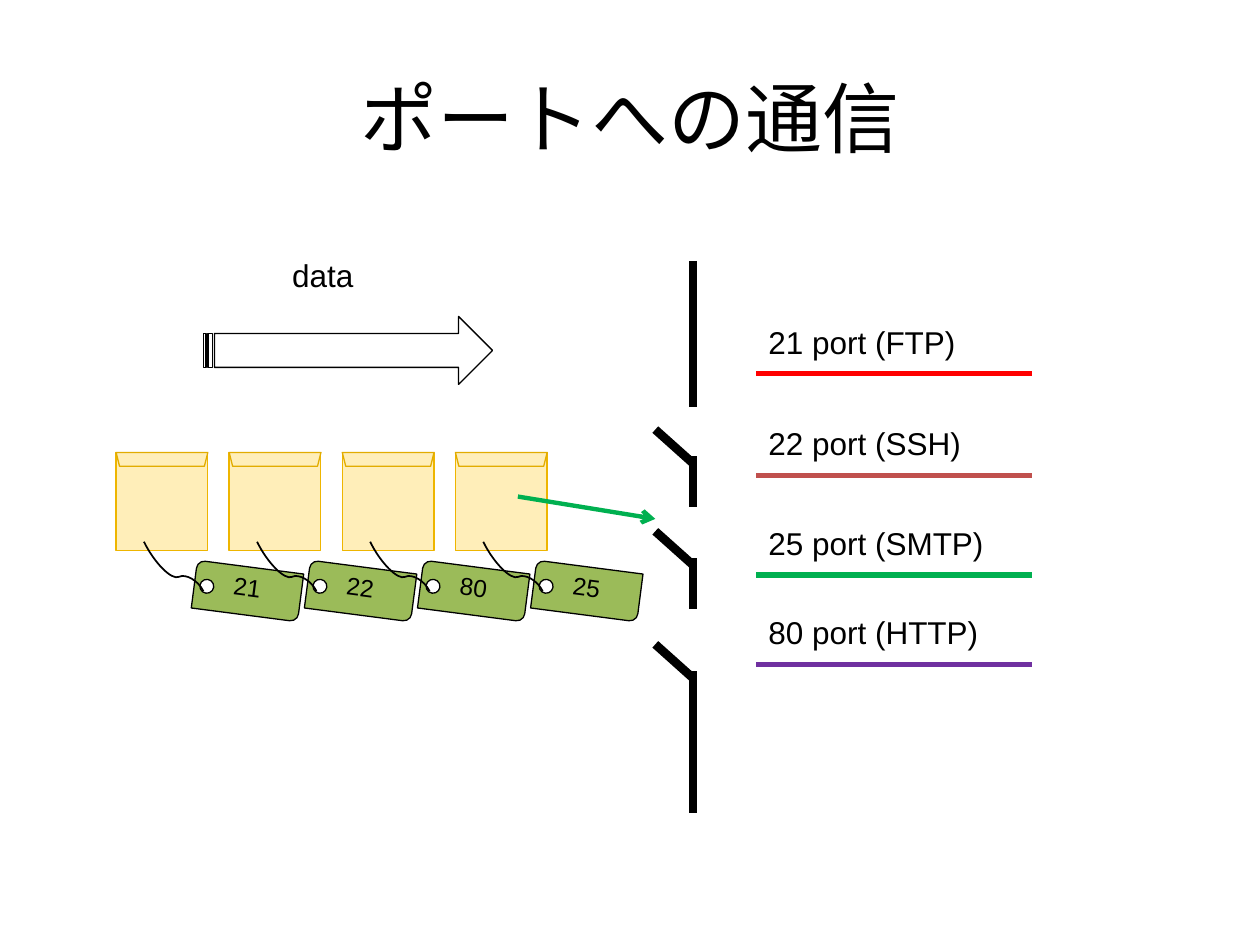
from lxml import etree
from pptx import Presentation
from pptx import util as u
from pptx.dml.color import RGBColor
from pptx.enum import shapes, text
from pptx.oxml.ns import qn

# Content
TITLE = "ポートへの通信"
PACKETS = ["21", "22", "80", "25"]
PORTS = [  # label, top in cm, underline colour
    ("21 port (FTP)", 6.38, "FF0000"),
    ("22 port (SSH)", 8.43, "C0504D"),
    ("25 port (SMTP)", 10.44, "00B050"),
    ("80 port (HTTP)", 12.24, "7030A0"),
]
DOORS = [9.2, 11.25, 13.53]  # top of each door post in cm

# Layout in cm
PACKET_X, PACKET_Y, PACKET_W, PACKET_H, PITCH = 2.34, 9.12, 1.85, 1.98, 2.28
TAG_Y, TILT = 11.43, 7.4
WALL_X, WALL_TOP, WALL_END = 13.97, 5.26, 16.38
POST_H, LEAF_X = 1.03, 13.21
PORT_X, PORT_END = 15.24, 20.8

MSO = shapes.MSO_SHAPE
LINK = shapes.MSO_CONNECTOR

prs = Presentation()
prs.slide_width, prs.slide_height = u.Cm(25.4), u.Cm(19.05)
s = prs.slides.add_slide(prs.slide_layouts[6])


def rgb(hex_color):
    return RGBColor.from_string(hex_color)


def add_shape(kind, x, y, w, h, fill=None, line="000000", rot=0):
    sp = s.shapes.add_shape(kind, *map(u.Cm, (x, y, w, h)))
    sp.shadow.inherit = False
    sp.rotation = rot
    if fill:
        sp.fill.solid()
        sp.fill.fore_color.rgb = rgb(fill)
    else:
        sp.fill.background()
    sp.line.color.rgb = rgb(line)
    sp.line.width = u.Pt(0.75)
    return sp


def add_text(words, x, y, w, h, size=18, font="Arial", rot=0):
    sp = s.shapes.add_textbox(*map(u.Cm, (x, y, w, h)))
    sp.rotation = rot
    tf = sp.text_frame
    tf.word_wrap = True
    tf.text = words
    r = tf.paragraphs[0].runs[0]
    r.font.size, r.font.name = u.Pt(size), font
    r.font.color.rgb = rgb("000000")
    return sp


def add_line(x1, y1, x2, y2, color="000000", width=5, kind=LINK.STRAIGHT):
    ln = s.shapes.add_connector(kind, *map(u.Cm, (x1, y1, x2, y2)))
    ln.line.color.rgb = rgb(color)
    ln.line.width = u.Pt(width)
    etree.SubElement(ln._element.spPr, qn("a:effectLst"))
    return ln


def add_string(x, y, w, h):
    """Curved string, mirrored and turned, that ties a tag to its packet."""
    ln = add_line(x + w, y, x, y + h, width=1, kind=LINK.CURVE)
    sp_pr = ln._element.spPr
    sp_pr.find(qn("a:xfrm")).set("rot", str(244 * 60000))
    geom = sp_pr.find(qn("a:prstGeom"))
    guides = geom.find(qn("a:avLst"))
    if guides is None:
        guides = etree.SubElement(geom, qn("a:avLst"))
    etree.SubElement(guides, qn("a:gd"), name="adj1", fmla="val 66500")


# Title
sp = add_text(TITLE, 1.27, 0.76, 22.86, 3.18, size=44, font="Calibri")
sp.text_frame.vertical_anchor = text.MSO_ANCHOR.MIDDLE
sp.text_frame.paragraphs[0].alignment = text.PP_ALIGN.CENTER

# Packets with their port tags
for i, port in enumerate(PACKETS):
    x = PACKET_X + i * PITCH
    add_shape(MSO.RECTANGLE, x, PACKET_Y, PACKET_W, PACKET_H, "FFEEB9", "EEB500")
    add_shape(MSO.TRAPEZOID, x, PACKET_Y, PACKET_W, 0.28, line="E2AC00", rot=180)
    add_shape(MSO.ROUND_2_DIAG_RECTANGLE, x + 1.57, TAG_Y, 2.16, 0.97, "9BBB59", rot=TILT)
    add_shape(MSO.OVAL, x + 1.69, TAG_Y + 0.25, 0.28, 0.28, "FFFFFF", rot=TILT)
    add_string(x + 0.45, 11.1, 1.42, 0.64)
    add_text(port, x + 2.11, TAG_Y, 1.45, 0.99, size=14, rot=TILT)

# Wall with open doors
add_line(WALL_X, WALL_TOP, WALL_X, 8.2)
for y in DOORS:
    add_line(WALL_X, y, WALL_X, y + POST_H)
    add_line(LEAF_X, y - 0.54, WALL_X, y + 0.14)
add_line(WALL_X, DOORS[-1] + POST_H, WALL_X, WALL_END)

# Ports
for label, y, color in PORTS:
    add_text(label, PORT_X, y, 6.58, 1.17)
    add_line(PORT_X, y + 1.15, PORT_END, y + 1.15, color, 3)

# Direction of the data
add_shape(MSO.STRIPED_RIGHT_ARROW, 4.11, 6.38, 5.82, 1.37, "FFFFFF")
add_text("data", 5.64, 5.03, 3.28, 1.47)

# Packet heading for its door
ln = add_line(10.44, 10.01, LEAF_X, 10.46, "00B050", 2.5)
etree.SubElement(ln.line._get_or_add_ln(), qn("a:tailEnd"), type="arrow")

prs.save("out.pptx")
